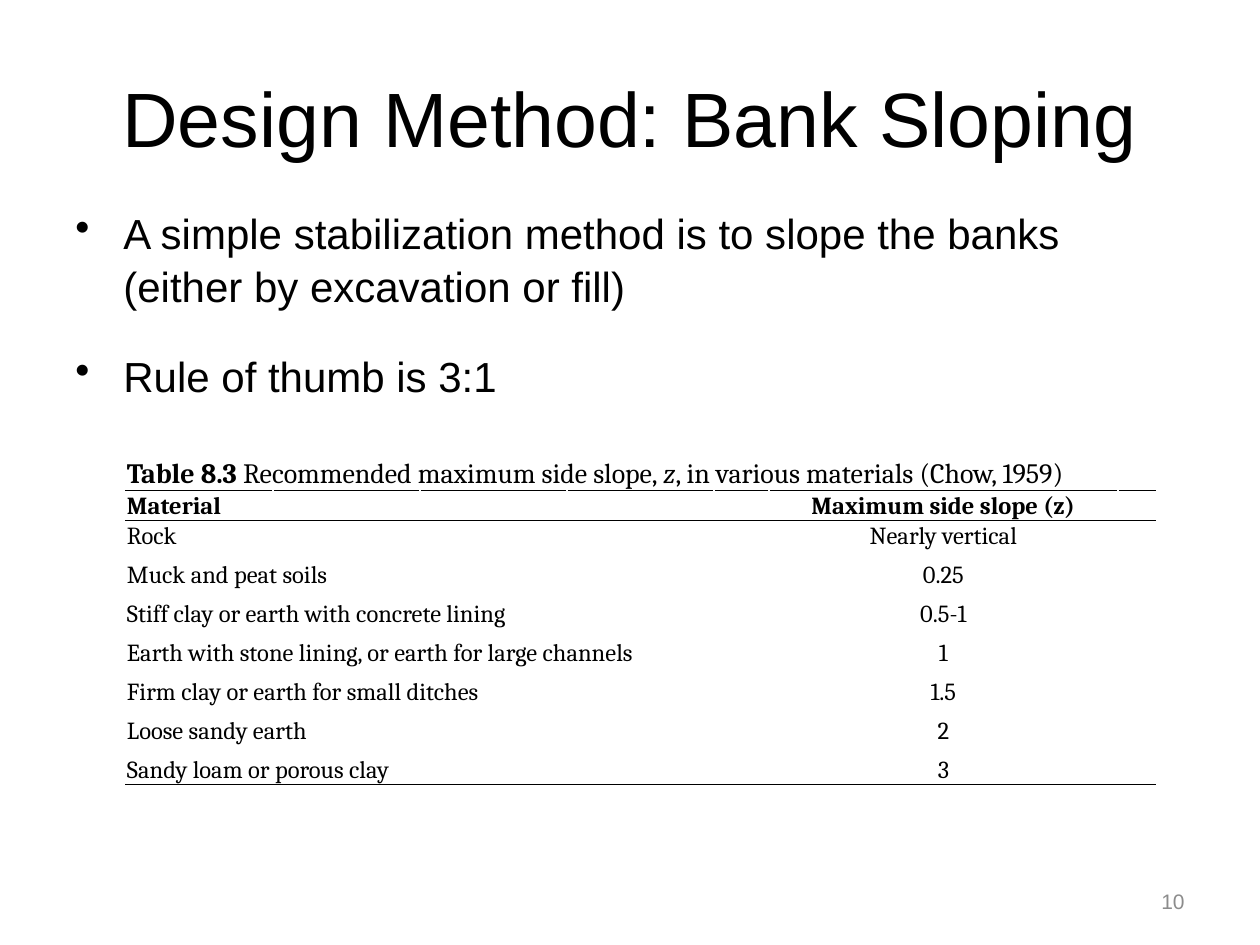
from dataclasses import dataclass

from lxml.etree import SubElement
from pptx import Presentation
from pptx.dml.color import RGBColor
from pptx.enum.text import MSO_ANCHOR, PP_ALIGN
from pptx.oxml import parse_xml
from pptx.oxml.ns import nsdecls, qn
from pptx.util import Emu, Pt

# Content
TITLE = "Design Method: Bank Sloping"
BULLETS = [
    "A simple stabilization method is to slope the banks (either by excavation or fill)",
    "Rule of thumb is 3:1",
]
PAGE_NUMBER = "10"
CAPTION = [  # text, bold, italic
    ("Table 8.3", True, False),
    (" Recommended maximum side slope, ", False, False),
    ("z", False, True),
    (", in various materials (Chow, 1959)", False, False),
]
SLOPES = [  # material, maximum side slope, columns the material spans
    ("Material", "Maximum side slope (z)", 1),
    ("Rock", "Nearly vertical", 1),
    ("Muck and peat soils", "0.25", 2),
    ("Stiff clay or earth with concrete lining", "0.5-1", 4),
    ("Earth with stone lining, or earth for large channels", "1", 5),
    ("Firm clay or earth for small ditches", "1.5", 4),
    ("Loose sandy earth", "2", 2),
    ("Sandy loam or porous clay", "3", 3),
]


@dataclass(frozen=True)
class Theme:
    sans: str = "Arial"
    serif: str = "Cambria"
    ink: str = "000000"
    muted: str = "8C8C8C"
    title: int = 44
    body: int = 24
    caption: int = 16
    cell: int = 14
    number: int = 12


THEME = Theme()

# Layout in px
SCALE = 914400 / 126
SLIDE = (1260, 945)
TITLE_BOX = (63, 38, 1134, 157)
BULLET_BOX = (63, 199, 1124, 620)
NUMBER_BOX = (903, 876, 294, 50)
TABLE_AT = (126, 451)
COLUMNS = [147] * 4 + [55, 349, 37]
ROWS = [39, 29, 29] + [39] * 6
VALUE_COLUMN = 5
RULED_ROWS = {0, 1, len(SLOPES)}  # rows with a line below
INDENT = 48


def px(length):
    return Emu(round(length * SCALE))


def place(shape, box):
    shape.left, shape.top, shape.width, shape.height = map(px, box)


def style(paragraph, face, size, color=THEME.ink, align=PP_ALIGN.LEFT, bold=False):
    paragraph.alignment = align
    font = paragraph.font
    font.name, font.size, font.bold = face, Pt(size), bold
    font.color.rgb = RGBColor.from_string(color)


def add_bullet(paragraph):
    properties = paragraph._p.get_or_add_pPr()
    properties.set("marL", str(px(INDENT)))
    properties.set("indent", str(-px(INDENT)))
    mark = parse_xml(f'<a:buChar {nsdecls("a")} char="•"/>')
    properties.insert_element_before(mark, "a:tabLst", "a:defRPr", "a:extLst")


def rule_cell(cell, edge):
    line = parse_xml(
        f'<a:{edge} {nsdecls("a")} w="{Pt(0.5)}"><a:solidFill>'
        f'<a:srgbClr val="{THEME.ink}"/></a:solidFill></a:{edge}>'
    )
    cell._tc.get_or_add_tcPr().insert(0, line)


def format_cell(cell, row, column):
    cell.fill.background()
    cell.vertical_anchor = MSO_ANCHOR.BOTTOM
    cell.margin_left = cell.margin_right = cell.margin_top = px(1)
    cell.margin_bottom = 0
    paragraph = cell.text_frame.paragraphs[0]
    style(paragraph, THEME.serif, THEME.cell if row else THEME.caption,
          align=PP_ALIGN.CENTER if column == VALUE_COLUMN else PP_ALIGN.LEFT,
          bold=row == 1)
    if not cell.text_frame.text:  # keeps empty cells from stretching the row
        SubElement(paragraph._p, qn("a:endParaRPr"), sz=str(THEME.cell * 100))
    if row in RULED_ROWS:
        rule_cell(cell, "lnB")
    if row - 1 in RULED_ROWS:
        rule_cell(cell, "lnT")


def add_title(slide):
    title = slide.shapes.title
    place(title, TITLE_BOX)
    title.text_frame.text = TITLE
    title.text_frame.vertical_anchor = MSO_ANCHOR.MIDDLE
    style(title.text_frame.paragraphs[0], THEME.sans, THEME.title, align=PP_ALIGN.CENTER)


def add_bullets(slide):
    frame = slide.shapes.add_textbox(*map(px, BULLET_BOX)).text_frame
    frame.word_wrap = True
    frame.text = "\n".join(BULLETS)
    for index, paragraph in enumerate(frame.paragraphs):
        style(paragraph, THEME.sans, THEME.body)
        paragraph.line_spacing = 1.05
        paragraph.space_before = Pt(21 if index else 0)
        add_bullet(paragraph)


def add_slope_table(slide):
    table = slide.shapes.add_table(
        len(ROWS), len(COLUMNS), *map(px, (*TABLE_AT, sum(COLUMNS), sum(ROWS)))
    ).table
    table.first_row = table.horz_banding = False
    for column, width in zip(table.columns, COLUMNS):
        column.width = px(width)
    for row, height in zip(table.rows, ROWS):
        row.height = px(height)

    # Caption across the full width
    caption = table.cell(0, 0)
    caption.merge(table.cell(0, len(COLUMNS) - 1))
    for text, bold, italic in CAPTION:
        run = caption.text_frame.paragraphs[0].add_run()
        run.text, run.font.bold, run.font.italic = text, bold, italic

    # Materials and slopes
    for row, (material, slope, span) in enumerate(SLOPES, 1):
        first = table.cell(row, 0)
        first.text = material
        if span > 1:
            first.merge(table.cell(row, span - 1))
        table.cell(row, VALUE_COLUMN).text = slope

    for row in range(len(ROWS)):
        for column in range(len(COLUMNS)):
            format_cell(table.cell(row, column), row, column)


def add_page_number(slide):
    frame = slide.shapes.add_textbox(*map(px, NUMBER_BOX)).text_frame
    frame.word_wrap = True
    frame.vertical_anchor = MSO_ANCHOR.MIDDLE
    frame.text = PAGE_NUMBER
    style(frame.paragraphs[0], THEME.sans, THEME.number, THEME.muted, PP_ALIGN.RIGHT)


def main():
    deck = Presentation()
    deck.slide_width, deck.slide_height = map(px, SLIDE)
    slide = deck.slides.add_slide(deck.slide_layouts[5])
    add_title(slide)
    add_bullets(slide)
    add_slope_table(slide)
    add_page_number(slide)
    deck.save("out.pptx")


if __name__ == "__main__":
    main()
